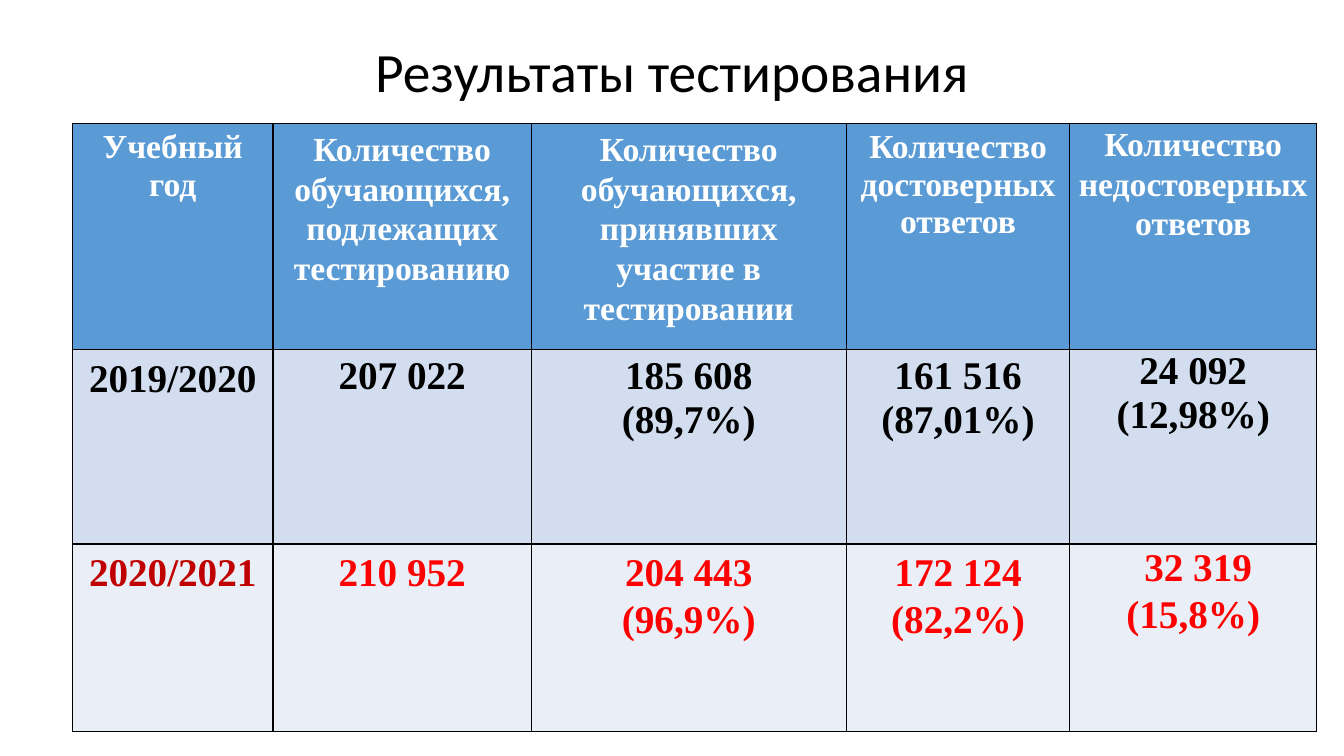
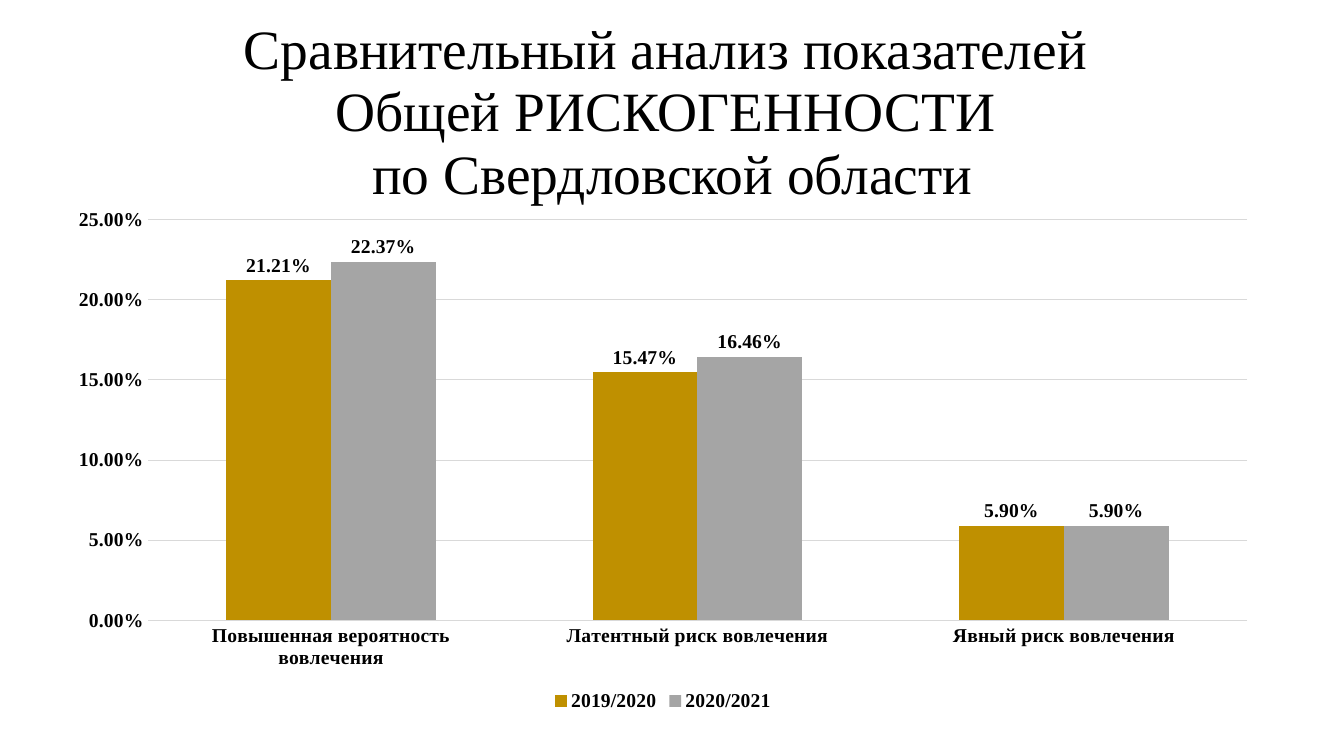
import pptx
import pptx.util
import pptx.dml.color
import pptx.enum.text
import pptx.enum.chart
import pptx.chart.data
import pptx.oxml

theme = {
    "black": "000000", "white": "FFFFFF", "red": "FF0000", "dark": "C00000",
    "head": "5B9BD5", "band": "D2DEEF", "pale": "EAEFF7",
    "gold": "BF9000", "gray": "A5A5A5", "grid": "D9D9D9",
    "sans": "Calibri", "serif": "Times New Roman",
    "title": 39.6, "label": 24, "value": 28, "chart": 14,
}

titles = [
    {"text": "Результаты тестирования", "box": (88, 38, 1104, 66),
     "font": "sans", "space": 0.9},
    {"text": "Сравнительный анализ показателей \vОбщей РИСКОГЕННОСТИ \vпо Свердловской области",
     "box": (100, 27, 1081, 161), "font": "serif", "space": 0.94},
]

table_box = (69, 118)
widths = [191, 246, 300, 213, 235]
rows = [
    {"height": 188, "fill": "head", "size": "label", "colors": ["white"] * 5,
     "spaces": [1, 1.07, 1.07, 1, 1.07],
     "cells": ["Учебный год",
               "Количество обучающихся, подлежащих тестированию",
               "Количество обучающихся, принявших участие в тестировании",
               "Количество достоверных ответов",
               "Количество недостоверных ответов"]},
    {"height": 185, "fill": "band", "size": "value", "colors": ["black"] * 5,
     "spaces": [1.07, 1, 1, 1, 1],
     "cells": ["2019/2020", "207 022", "185 608\n(89,7%)",
               "161 516\n(87,01%)", "24 092\n(12,98%)"]},
    {"height": 179, "fill": "pale", "size": "value", "colors": ["dark"] + ["red"] * 4,
     "spaces": [1.07] * 5,
     "cells": ["2020/2021", "210 952", "204 443\n(96,9%)",
               "172 124\n(82,2%)", " 32 319\n(15,8%)"]},
]

chart_box = (52, 189, 1159, 493)
groups = ["Повышенная вероятность вовлечения", "Латентный риск вовлечения",
          "Явный риск вовлечения"]
series = [
    ("2019/2020", "gold", [0.2121, 0.1547, 0.059]),
    ("2020/2021", "gray", [0.2237, 0.1646, 0.059]),
]
percent = "0.00%"


def px(count):
    return pptx.util.Emu(count * 9525)


def tint(name):
    return pptx.dml.color.RGBColor.from_string(theme[name])


def style(font, face="serif", size="chart", color="black", bold=True):
    font.name = theme[face]
    font.size = pptx.util.Pt(theme[size])
    font.bold = bold
    font.color.rgb = tint(color)


def write(frame, text, space=1, **look):
    frame.word_wrap = True
    frame.text = text
    for para in frame.paragraphs:
        para.alignment = pptx.enum.text.PP_ALIGN.CENTER
        para.line_spacing = space
        for run in para.runs:
            style(run.font, **look)


def add_title(slide, text, box, font, space):
    frame = slide.shapes.add_textbox(*map(px, box)).text_frame
    frame.vertical_anchor = pptx.enum.text.MSO_ANCHOR.MIDDLE
    write(frame, text, space, face=font, size="title", bold=False)


def add_edges(cell):
    props = cell._tc.get_or_add_tcPr()
    for side in "LRTB":
        props.append(pptx.oxml.parse_xml(
            f'<a:ln{side} xmlns:a="http://schemas.openxmlformats.org/drawingml/2006/main" w="12700">'
            f'<a:solidFill><a:srgbClr val="{theme["black"]}"/></a:solidFill></a:ln{side}>'))


def add_table(slide):
    heights = [row["height"] for row in rows]
    table = slide.shapes.add_table(
        len(rows), len(widths), *map(px, (*table_box, sum(widths), sum(heights)))).table
    for col, width in zip(table.columns, widths):
        col.width = px(width)
    for line, row in zip(table.rows, rows):
        line.height = px(row["height"])
        for cell, text, color, space in zip(line.cells, row["cells"], row["colors"], row["spaces"]):
            add_edges(cell)
            cell.fill.solid()
            cell.fill.fore_color.rgb = tint(row["fill"])
            write(cell.text_frame, text, space, size=row["size"], color=color)
        last = line.cells[len(widths) - 1]
        last.margin_left = last.margin_right = last.margin_top = last.margin_bottom = 0


def add_chart(slide):
    kinds = pptx.enum.chart
    data = pptx.chart.data.CategoryChartData(number_format=percent)
    data.categories = groups
    for name, _, values in series:
        data.add_series(name, values)
    chart = slide.shapes.add_chart(
        kinds.XL_CHART_TYPE.COLUMN_CLUSTERED, *map(px, chart_box), data).chart
    style(chart.font)
    chart.has_title = False
    chart.has_legend = True
    chart.legend.position = kinds.XL_LEGEND_POSITION.BOTTOM
    chart.legend.include_in_layout = False
    style(chart.legend.font)
    for axis in (chart.category_axis, chart.value_axis):
        axis.major_tick_mark = axis.minor_tick_mark = kinds.XL_TICK_MARK.NONE
        axis.format.line.fill.background()
        style(axis.tick_labels.font)
    scale = chart.value_axis
    scale.minimum_scale, scale.maximum_scale, scale.major_unit = 0, 0.25, 0.05
    scale.tick_labels.number_format = percent
    scale.tick_labels.number_format_is_linked = False
    grid = scale.major_gridlines.format.line
    grid.color.rgb = tint("grid")
    grid.width = pptx.util.Pt(0.75)
    plot = chart.plots[0]
    plot.vary_by_categories = False
    plot.gap_width, plot.overlap = 150, 0
    for bars, (_, color, _) in zip(plot.series, series):
        bars.format.fill.solid()
        bars.format.fill.fore_color.rgb = tint(color)
        labels = bars.data_labels
        labels.show_value = True
        labels.number_format = percent
        labels.number_format_is_linked = False
        labels.position = kinds.XL_LABEL_POSITION.OUTSIDE_END
        style(labels.font)


def main():
    deck = pptx.Presentation()
    deck.slide_width, deck.slide_height = px(1280), px(720)
    for title, fill in zip(titles, (add_table, add_chart)):
        slide = deck.slides.add_slide(deck.slide_layouts[6])
        add_title(slide, **title)
        fill(slide)
    deck.save("out.pptx")


if __name__ == "__main__":
    main()
